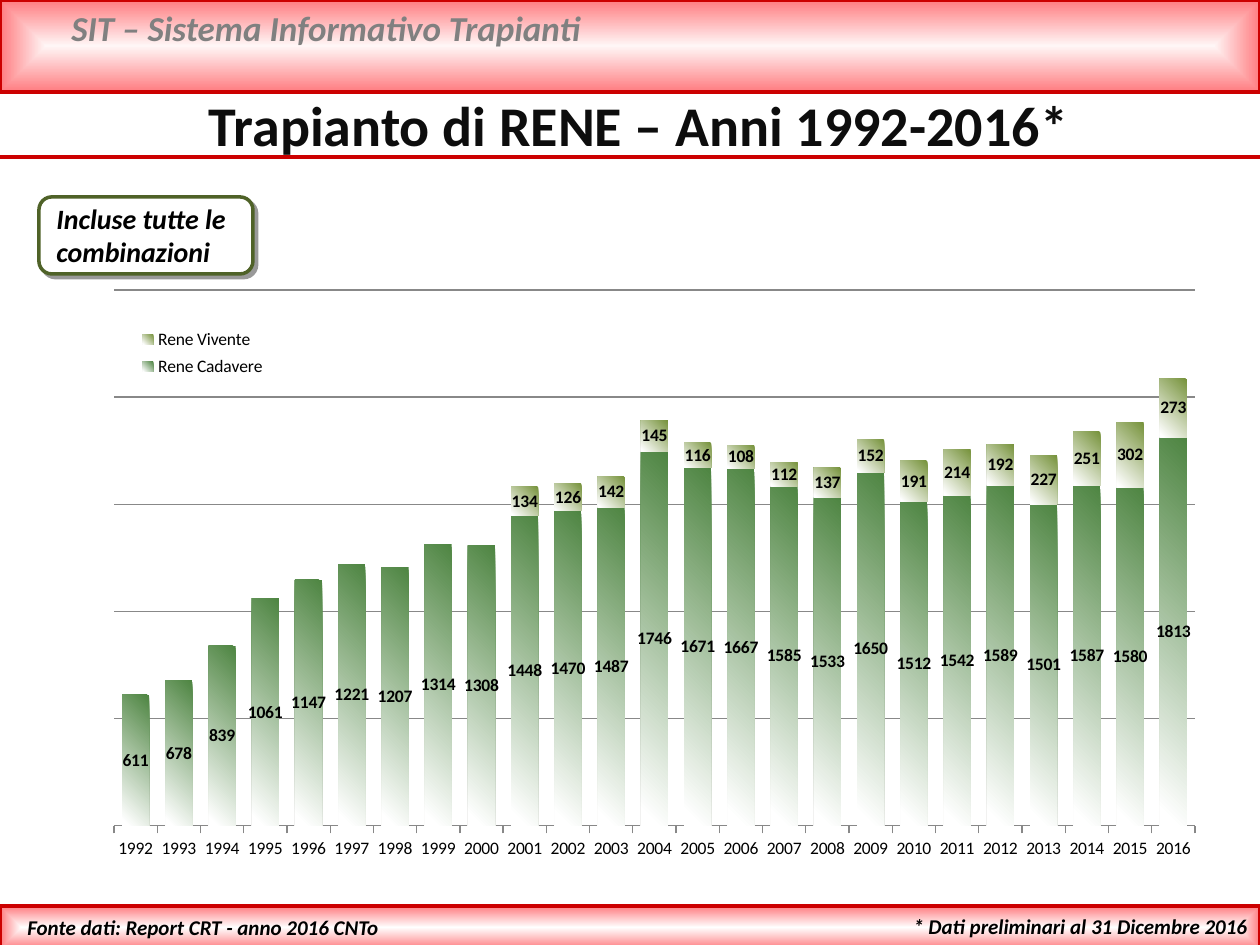
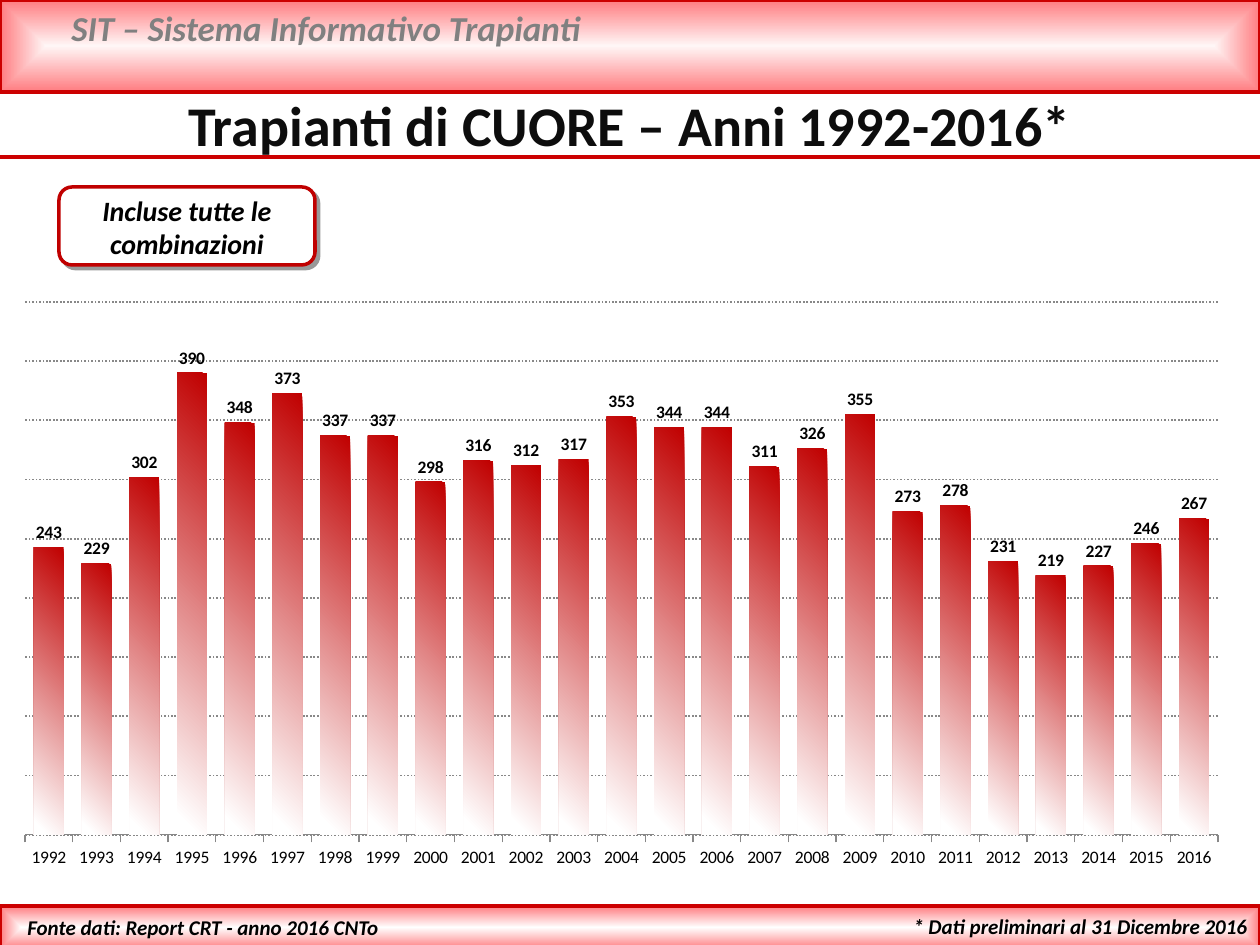
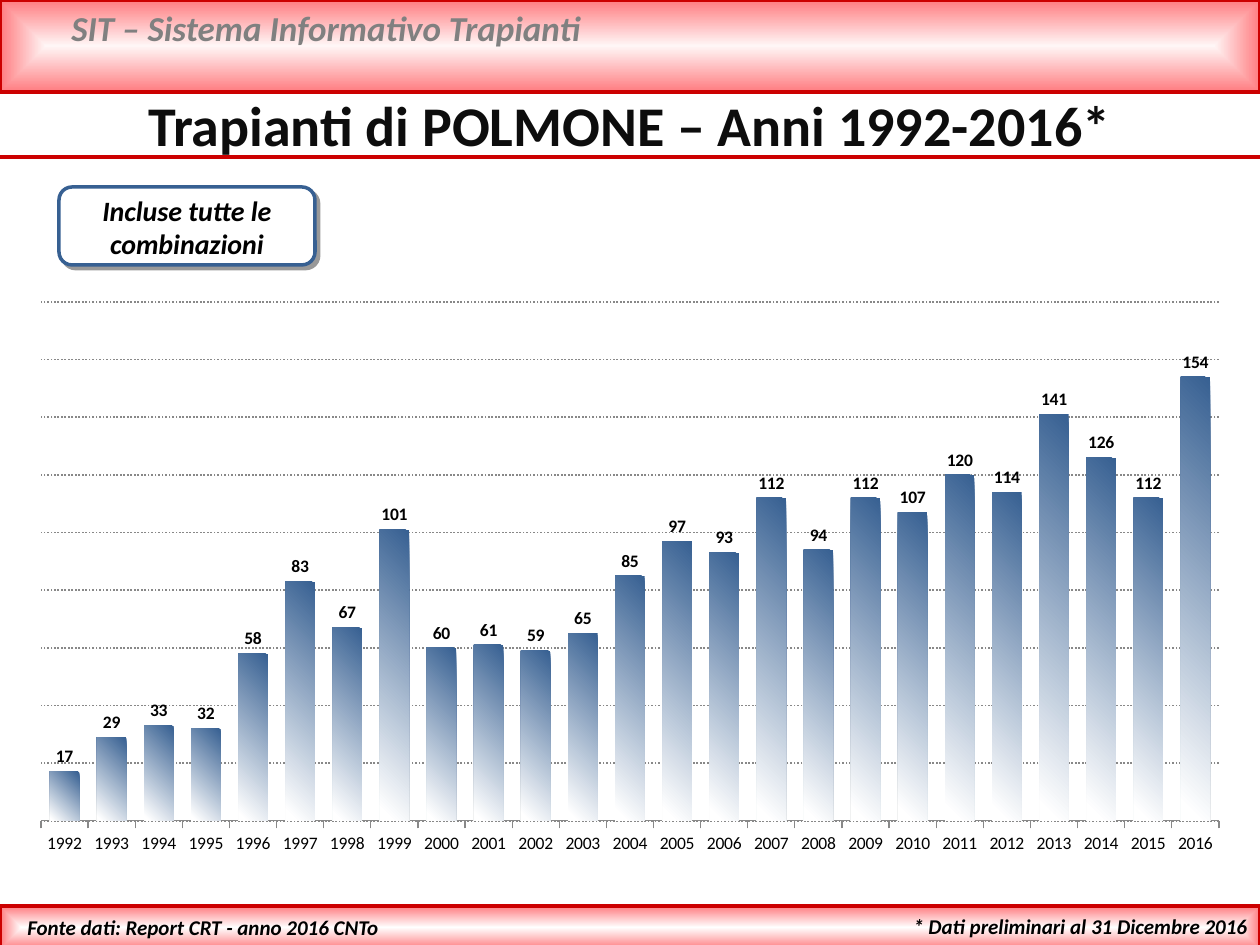
"""Build three slides of yearly transplant column charts."""
from lxml import etree
from pptx import Presentation
from pptx import util as u
from pptx.chart.data import CategoryChartData
from pptx.dml.color import RGBColor
from pptx.enum import chart as kinds, dml, shapes, text
from pptx.oxml import parse_xml
from pptx.oxml.ns import nsdecls, qn

FONT = "Calibri"
RED = RGBColor(0xCC, 0x00, 0x00)
PINK = RGBColor(0xFF, 0x7C, 0x80)
BLUSH = RGBColor(0xFF, 0xF6, 0xF6)
WHITE = RGBColor(0xFF, 0xFF, 0xFF)
BLACK = RGBColor(0x00, 0x00, 0x00)
INK = RGBColor(0x0D, 0x0D, 0x0D)
GREY = RGBColor(0x80, 0x80, 0x80)
RULE = RGBColor(0x88, 0x88, 0x88)
MOSS = RGBColor(0x4F, 0x62, 0x28)
GREEN = RGBColor(0x4E, 0x85, 0x42)
OLIVE = RGBColor(0x77, 0x93, 0x3C)
CRIMSON = RGBColor(0xC0, 0x00, 0x00)
BLUE = RGBColor(0x37, 0x60, 0x92)

LEFT, MID, RIGHT = text.PP_ALIGN.LEFT, text.PP_ALIGN.CENTER, text.PP_ALIGN.RIGHT
WIDE, HIGH = 1260, 945
YEARS = [str(year) for year in range(1992, 2017)]
NOTE = "Incluse tutte le combinazioni"

BANDS = [((0, 0, WIDE, 92), BLUSH), ((0, 906, WIDE, 43), WHITE)]
LABELS = [
    ("SIT – Sistema Informativo Trapianti", (59, 0, 1131, 55), 20, GREY, LEFT),
    ("* Dati preliminari al 31 Dicembre 2016", (740, 907, 520, 38), 12, BLACK, RIGHT),
    ("Fonte dati: Report CRT - anno 2016 CNTo", (15, 908, 404, 38), 12, BLACK, LEFT),
]

SLIDES = [
    dict(title="Trapianto di RENE – Anni 1992-2016*", head=(137, 84, 1004, 81),
         edge=MOSS, card=(39, 197, 214, 77), note=(44, 195, 208, 81), align=LEFT,
         frame=(92, 278, 1126, 591), plot=(114, 290, 1081, 536),
         legend=(135, 322, 135, 62), top=2500, step=500,
         series=[
             ("Rene Cadavere", GREEN,
              [611, 678, 839, 1061, 1147, 1221, 1207, 1314, 1308, 1448, 1470, 1487, 1746,
               1671, 1667, 1585, 1533, 1650, 1512, 1542, 1589, 1501, 1587, 1580, 1813]),
             ("Rene Vivente", OLIVE,
              [None] * 9 + [134, 126, 142, 145, 116, 108, 112, 137, 152, 191, 214,
                            192, 227, 251, 302, 273])]),
    dict(title="Trapianti di CUORE – Anni 1992-2016*", head=(0, 84, WIDE, 81),
         edge=CRIMSON, card=(59, 187, 256, 78), note=(59, 187, 256, 81), align=MID,
         frame=(0, 290, 1244, 588), plot=(25, 302, 1193, 533),
         legend=None, top=450, step=50,
         series=[
             ("Series 1", CRIMSON,
              [243, 229, 302, 390, 348, 373, 337, 337, 298, 316, 312, 317, 353,
               344, 344, 311, 326, 355, 273, 278, 231, 219, 227, 246, 267])]),
    dict(title="Trapianti di POLMONE – Anni 1992-2016*", head=(0, 84, WIDE, 81),
         edge=BLUE, card=(59, 187, 256, 78), note=(59, 187, 256, 81), align=MID,
         frame=(16, 290, 1226, 575), plot=(41, 302, 1178, 519),
         legend=None, top=180, step=20,
         series=[
             ("Series 1", BLUE,
              [17, 29, 33, 32, 58, 83, 67, 101, 60, 61, 59, 65, 85,
               97, 93, 112, 94, 112, 107, 120, 114, 141, 126, 112, 154])]),
]


def px(*vals):
    return [u.Emu(round(val * 914400 / 126)) for val in vals]


def style(font, size, color, bold=False, italic=False):
    font.name, font.size, font.bold, font.italic = FONT, u.Pt(size), bold, italic
    font.color.rgb = color


def blend(fill, first, last, stop=1.0):
    fill.gradient()
    for point, color, pos in zip(fill.gradient_stops, (first, last), (0, stop)):
        point.color.rgb, point.position = color, pos


def write(slide, words, box, size, color, align):
    frame = slide.shapes.add_textbox(*px(*box)).text_frame
    frame.word_wrap = True
    para = frame.paragraphs[0]
    para.text, para.alignment = words, align
    style(para.font, size, color, True, True)


def panel(slide, kind, box, edge):
    shape = slide.shapes.add_shape(kind, *px(*box))
    shape.shadow.inherit = False
    shape.line.color.rgb, shape.line.width = edge, u.Pt(2)
    return shape


def brand(slide, layout):
    """Draw the shared bands, rule and labels, and hand them to the layout."""
    for box, core in BANDS:
        band = panel(slide, shapes.MSO_SHAPE.RECTANGLE, box, RED)
        blend(band.fill, core, PINK)
        grad = band.element.spPr.find(qn("a:gradFill"))
        grad.replace(grad.find(qn("a:lin")), parse_xml(
            f'<a:path {nsdecls("a")} path="shape">'
            '<a:fillToRect l="50000" t="50000" r="50000" b="50000"/></a:path>'))
    rule = slide.shapes.add_connector(shapes.MSO_CONNECTOR.STRAIGHT, *px(0, 157, WIDE, 157))
    rule.line.color.rgb, rule.line.width = RED, u.Pt(2)
    etree.SubElement(rule.element.spPr, qn("a:effectLst"))
    for label in LABELS:
        write(slide, *label)
    for hold in list(layout.placeholders)[1:]:
        layout.shapes.element.remove(hold.element)
    for shape in list(slide.shapes)[1:]:
        layout.shapes.element.append(shape.element)


def place(part, box, frame, inner=False):
    """Fix the plot area or the legend at a box within the chart frame."""
    old = part.find(qn("c:layout"))
    if old is not None:
        part.remove(old)
    x, y = (box[0] - frame[0]) / frame[2], (box[1] - frame[1]) / frame[3]
    parts = [("layoutTarget", "inner")] if inner else []
    parts += [("xMode", "edge"), ("yMode", "edge"), ("x", x), ("y", y),
              ("w", box[2] / frame[2]), ("h", box[3] / frame[3])]
    body = "".join(f'<c:{tag} val="{val}"/>' for tag, val in parts)
    layout = parse_xml(f'<c:layout {nsdecls("c")}><c:manualLayout>{body}'
                       '</c:manualLayout></c:layout>')
    if inner:
        part.insert(0, layout)
    else:
        part.find(qn("c:legendPos")).addnext(layout)


def graph(slide, item):
    data = CategoryChartData()
    data.categories = YEARS
    for name, _, vals in item["series"]:
        data.add_series(name, vals)
    stack = len(item["series"]) > 1
    types, spots = kinds.XL_CHART_TYPE, kinds.XL_LABEL_POSITION
    kind = types.COLUMN_STACKED if stack else types.COLUMN_CLUSTERED
    chart = slide.shapes.add_chart(kind, *px(*item["frame"]), data).chart
    chart.has_title = False
    style(chart.font, 10, BLACK)
    plot = chart.plots[0]
    plot.gap_width, plot.overlap = 60, 100 if stack else -20
    plot.vary_by_categories = False
    for ser, (_, color, _) in zip(plot.series, item["series"]):
        blend(ser.format.fill, color, WHITE, 0.96)
        ser.format.fill.gradient_angle = 225
        tags = ser.data_labels
        tags.show_value = True
        tags.position = spots.CENTER if stack else spots.OUTSIDE_END
        style(tags.font, 10, BLACK, True)
    axis = chart.value_axis
    axis.visible, axis.has_major_gridlines = False, True
    axis.minimum_scale, axis.maximum_scale, axis.major_unit = 0, item["top"], item["step"]
    grid = axis.major_gridlines.format.line
    grid.color.rgb, grid.width = RULE, u.Pt(1 if not stack else 0.75)
    if not stack:
        grid.dash_style = dml.MSO_LINE.ROUND_DOT
    base = chart.category_axis
    base.major_tick_mark = kinds.XL_TICK_MARK.OUTSIDE
    base.format.line.color.rgb = RULE
    place(chart.element.chart.plotArea, item["plot"], item["frame"], True)
    chart.has_legend = stack
    if stack:
        chart.legend.position = kinds.XL_LEGEND_POSITION.LEFT
        chart.legend.include_in_layout = True
        style(chart.legend.font, 10, BLACK)
        place(chart.element.chart.find(qn("c:legend")), item["legend"], item["frame"])


def main():
    deck = Presentation()
    deck.slide_width, deck.slide_height = px(WIDE, HIGH)
    layout = deck.slide_layouts[5]
    for item in SLIDES:
        slide = deck.slides.add_slide(layout)
        if item is SLIDES[0]:
            brand(slide, layout)
        title = slide.shapes.title
        title.left, title.top, title.width, title.height = px(*item["head"])
        para = title.text_frame.paragraphs[0]
        para.text, para.alignment = item["title"], MID
        style(para.font, 32, INK, True)
        card = panel(slide, shapes.MSO_SHAPE.ROUNDED_RECTANGLE, item["card"], item["edge"])
        card.fill.solid()
        card.fill.fore_color.rgb = WHITE
        card.element.spPr.find(qn("a:effectLst")).append(parse_xml(
            f'<a:outerShdw {nsdecls("a")} blurRad="0" dist="38100" dir="2700000" algn="tl">'
            '<a:srgbClr val="000000"><a:alpha val="40000"/></a:srgbClr></a:outerShdw>'))
        write(slide, NOTE, item["note"], 16, BLACK, item["align"])
        graph(slide, item)
    deck.save("out.pptx")


if __name__ == "__main__":
    main()
